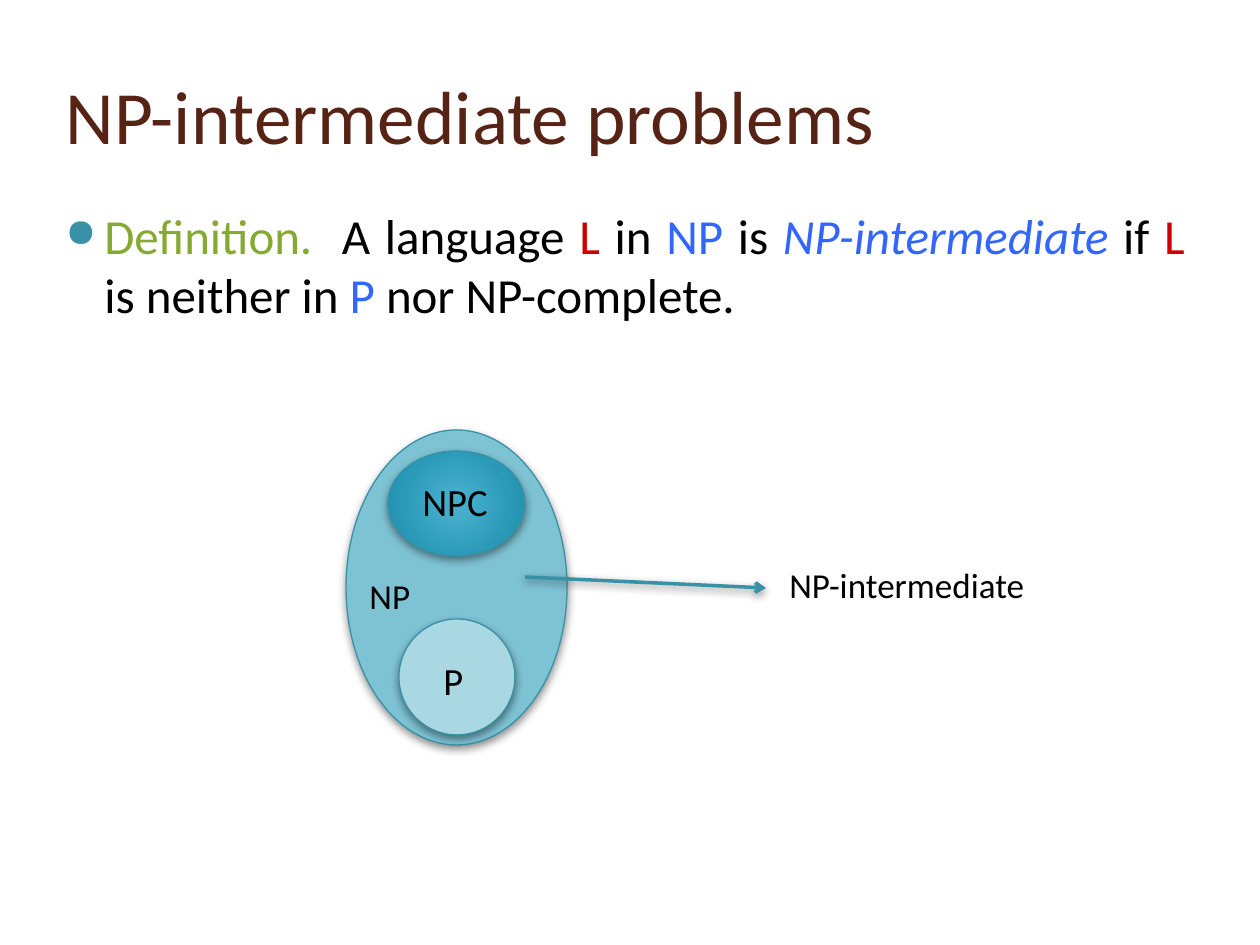
from lxml.etree import fromstring
from pptx import Presentation
from pptx.dml.color import RGBColor
from pptx.enum.shapes import MSO_CONNECTOR as Link, MSO_SHAPE as Form
from pptx.enum.text import MSO_ANCHOR as Anchor, MSO_AUTO_SIZE as Auto, PP_ALIGN as Align
from pptx.util import Emu, Pt

hue = RGBColor.from_string
NS = 'xmlns:a="http://schemas.openxmlformats.org/drawingml/2006/main"'
TEAL, BLUE, RED, BLACK = "3891A7", "3366FF", "CC0000", "000000"


def px(*nums):
    return [Emu(round(n * 914400 / 126)) for n in nums]


def say(par, text, size, tint=BLACK, slant=False):
    run = par.add_run()
    run.text = text
    font = run.font
    font.name, font.size, font.italic = "Calibri", Pt(size), slant
    font.color.rgb = hue(tint)


deck = Presentation()
deck.slide_width, deck.slide_height = px(1260, 945)
slide = deck.slides.add_slide(deck.slide_layouts[5])
shapes = slide.shapes

title = shapes.title
title.left, title.top, title.width, title.height = px(53, 42, 1068, 145)
frame = title.text_frame
frame.auto_size, frame.vertical_anchor = Auto.NONE, Anchor.MIDDLE
frame.paragraphs[0].alignment = Align.LEFT
say(frame.paragraphs[0], "NP-intermediate problems", 43, "572314")

frame = shapes.add_textbox(*px(42, 199, 1155, 662)).text_frame
frame.word_wrap = True
par = frame.paragraphs[0]
par.alignment, par.space_before = Align.JUSTIFY, Pt(6)
props = par._p.get_or_add_pPr()
inset, hang = px(50, -39)
props.set("marL", str(inset))
props.set("indent", str(hang))
for mark in (
    f'<a:buClr {NS}><a:srgbClr val="{TEAL}"/></a:buClr>',
    f'<a:buSzPct {NS} val="80000"/>',
    f'<a:buChar {NS} char="●"/>',
):
    props.append(fromstring(mark))
for text, tint, slant in (
    ("Definition.  ", "84AA33", False),
    ("A language ", BLACK, False),
    ("L ", RED, False),
    ("in ", BLACK, False),
    ("NP ", BLUE, False),
    ("is ", BLACK, False),
    ("NP-intermediate ", BLUE, True),
    ("if ", BLACK, False),
    ("L ", RED, False),
    ("is neither in ", BLACK, False),
    ("P ", BLUE, False),
    ("nor NP-complete. ", BLACK, False),
):
    say(par, text, 28, tint, slant)

drawn = []
for spot, tint in (
    ((346, 430, 221, 315), "7EC3D4"),
    ((399, 619, 116, 116), "A9D7E2"),
    ((388, 451, 137, 105), None),
):
    oval = shapes.add_shape(Form.OVAL, *px(*spot))
    if tint:
        oval.fill.solid()
        oval.fill.fore_color.rgb = hue(tint)
    oval.line.color.rgb = hue(TEAL)
    oval.line.width = Pt(0.75)
    drawn.append(oval)

stops = ((0, "45ACCC"), (15, "45ACCB"), (62, "2B9AB9"), (97, "1C8AA7"), (100, "0E89A7"))
steps = "".join(
    f'<a:gs pos="{at * 1000}"><a:srgbClr val="{tint}"/></a:gs>' for at, tint in stops
)
oval._element.spPr.prstGeom.addnext(fromstring(
    f'<a:gradFill {NS}><a:gsLst>{steps}</a:gsLst><a:path path="circle">'
    '<a:fillToRect l="50000" t="50000" r="50000" b="50000"/></a:path></a:gradFill>'
))

for text, size, spot in (
    ("P", 22, (431, 651, 63, 59)),
    ("NPC", 22, (410, 472, 105, 59)),
    ("NP", 20, (357, 568, 95, 55)),
    ("NP-intermediate", 20, (777, 557, 325, 55)),
):
    frame = shapes.add_textbox(*px(*spot)).text_frame
    frame.word_wrap, frame.auto_size = True, Auto.SHAPE_TO_FIT_TEXT
    say(frame.paragraphs[0], text, size)

arrow = shapes.add_connector(Link.STRAIGHT, *px(525, 577, 766, 588))
arrow.line.color.rgb = hue(TEAL)
arrow.line.width = Pt(2)
arrow.line._get_or_add_ln().append(fromstring(f'<a:tailEnd {NS} type="arrow"/>'))
drawn.append(arrow)

for shape in drawn:
    shape._element.spPr.append(fromstring(
        f'<a:effectLst {NS}><a:outerShdw blurRad="{Pt(5)}" dist="{Pt(2)}" dir="5400000" '
        'algn="ctr" rotWithShape="0"><a:srgbClr val="000000"><a:alpha val="43000"/>'
        '</a:srgbClr></a:outerShdw></a:effectLst>'
    ))

deck.save("out.pptx")
